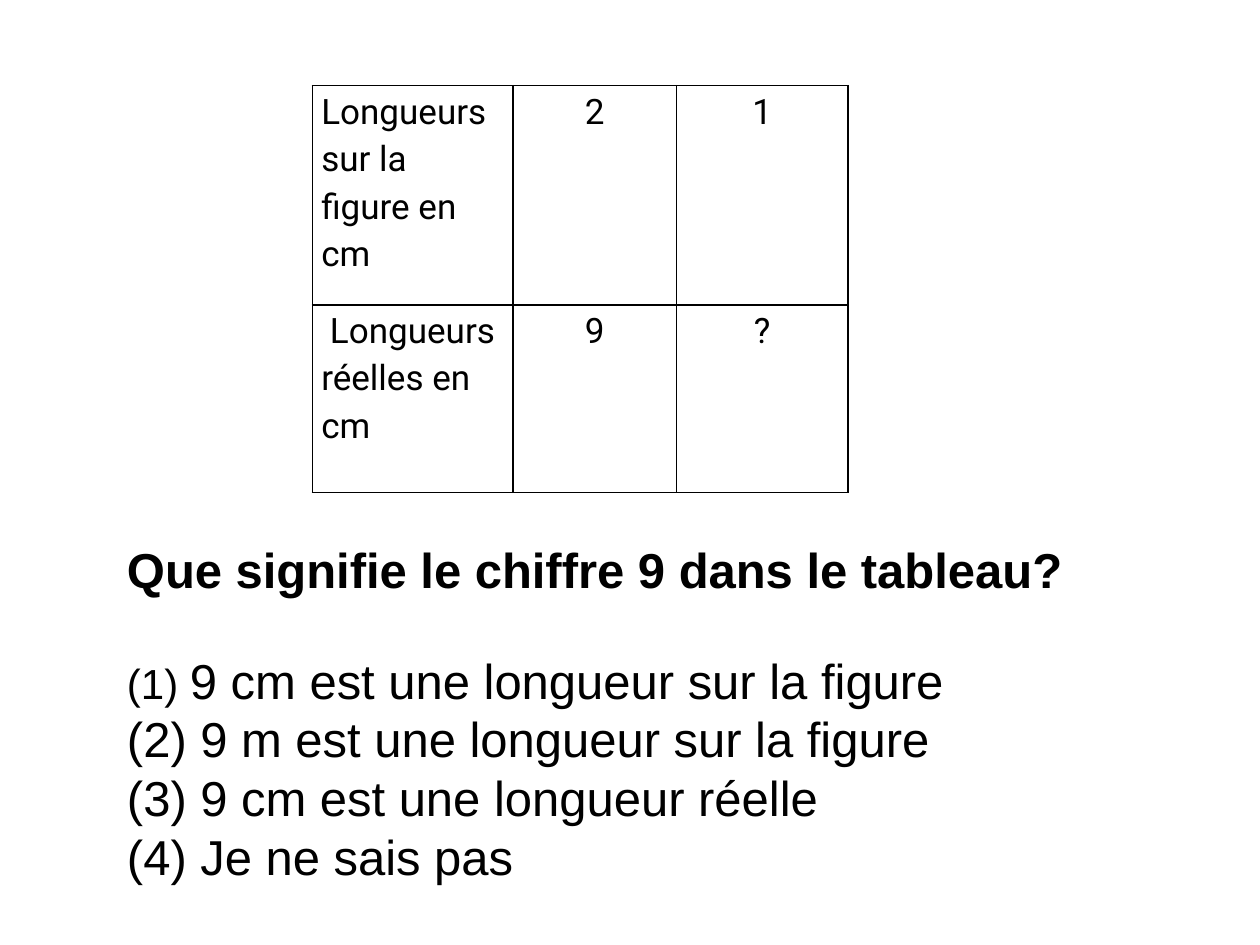
from lxml.etree import SubElement
from pptx import Presentation
from pptx.dml.color import RGBColor
from pptx.enum.text import MSO_AUTO_SIZE as AutoSize, PP_ALIGN as Align
from pptx.oxml.ns import qn
from pptx.util import Inches, Pt

BLACK = RGBColor(0, 0, 0)
COLUMN_WIDTHS = [1.59, 1.3, 1.36]
ROW_HEIGHTS = [1.74, 1.49]
LENGTHS = [
    ["Longueurs sur la figure en cm", "2", "1"],
    [" Longueurs réelles en cm", "9", "?"],
]
QUESTION = "Que signifie le chiffre 9 dans le tableau?"
ANSWERS = [
    "9 cm est une longueur sur la figure",
    "9 m est une longueur sur la figure",
    "9 cm est une longueur réelle",
    "Je ne sais pas",
]


def style_span(span, font, size, bold=False):
    span.font.name = font
    span.font.size = Pt(size)
    span.font.bold = bold
    span.font.color.rgb = BLACK


def add_borders(cell):
    properties = cell._tc.get_or_add_tcPr()
    for position, side in enumerate(("a:lnL", "a:lnR", "a:lnT", "a:lnB")):
        line = SubElement(properties, qn(side), w=str(Pt(1)))
        fill = SubElement(line, qn("a:solidFill"))
        SubElement(fill, qn("a:srgbClr"), val=str(BLACK))
        properties.insert(position, line)


deck = Presentation()
deck.slide_width, deck.slide_height = Inches(10), Inches(7.5)
page = deck.slides.add_slide(deck.slide_layouts[6])

table = page.shapes.add_table(
    len(ROW_HEIGHTS), len(COLUMN_WIDTHS), Inches(2.48), Inches(0.68),
    Inches(sum(COLUMN_WIDTHS)), Inches(sum(ROW_HEIGHTS)),
).table
table.first_row = table.horz_banding = False
for column, width in zip(table.columns, COLUMN_WIDTHS):
    column.width = Inches(width)
for row, height, texts in zip(table.rows, ROW_HEIGHTS, LENGTHS):
    row.height = Inches(height)
    for index, (cell, text) in enumerate(zip(row.cells, texts)):
        cell.margin_left = cell.margin_right = Inches(0.07)
        cell.margin_top = cell.margin_bottom = 0
        cell.fill.background()
        add_borders(cell)
        para = cell.text_frame.paragraphs[0]
        para.text = text
        para.line_spacing = 1.15
        para.alignment = Align.CENTER if index else Align.LEFT
        style_span(para.runs[0], "Roboto", 20)

box = page.shapes.add_textbox(Inches(0.91), Inches(4.23), Inches(7.87), Inches(2.86))
frame = box.text_frame
frame.word_wrap = True
frame.auto_size = AutoSize.SHAPE_TO_FIT_TEXT
frame.text = QUESTION
style_span(frame.paragraphs[0].runs[0], "Arial", 28, bold=True)

for index, answer in enumerate(ANSWERS):
    para = frame.add_paragraph()
    para.line_spacing = Pt(33.5)
    para.space_before = Pt(0 if index else 30)
    for text, size in ((" ", 28 if index else 24), (answer, 28)):
        span = para.add_run()
        span.text = text
        style_span(span, "Arial", size)
    properties = para._p.get_or_add_pPr()
    properties.set("marL", str(Inches(0.38)))
    properties.set("indent", str(-Inches(0.38)))
    SubElement(properties, qn("a:buFont"), typeface="Arial")
    SubElement(properties, qn("a:buAutoNum"), type="arabicParenBoth")

deck.save("out.pptx")
